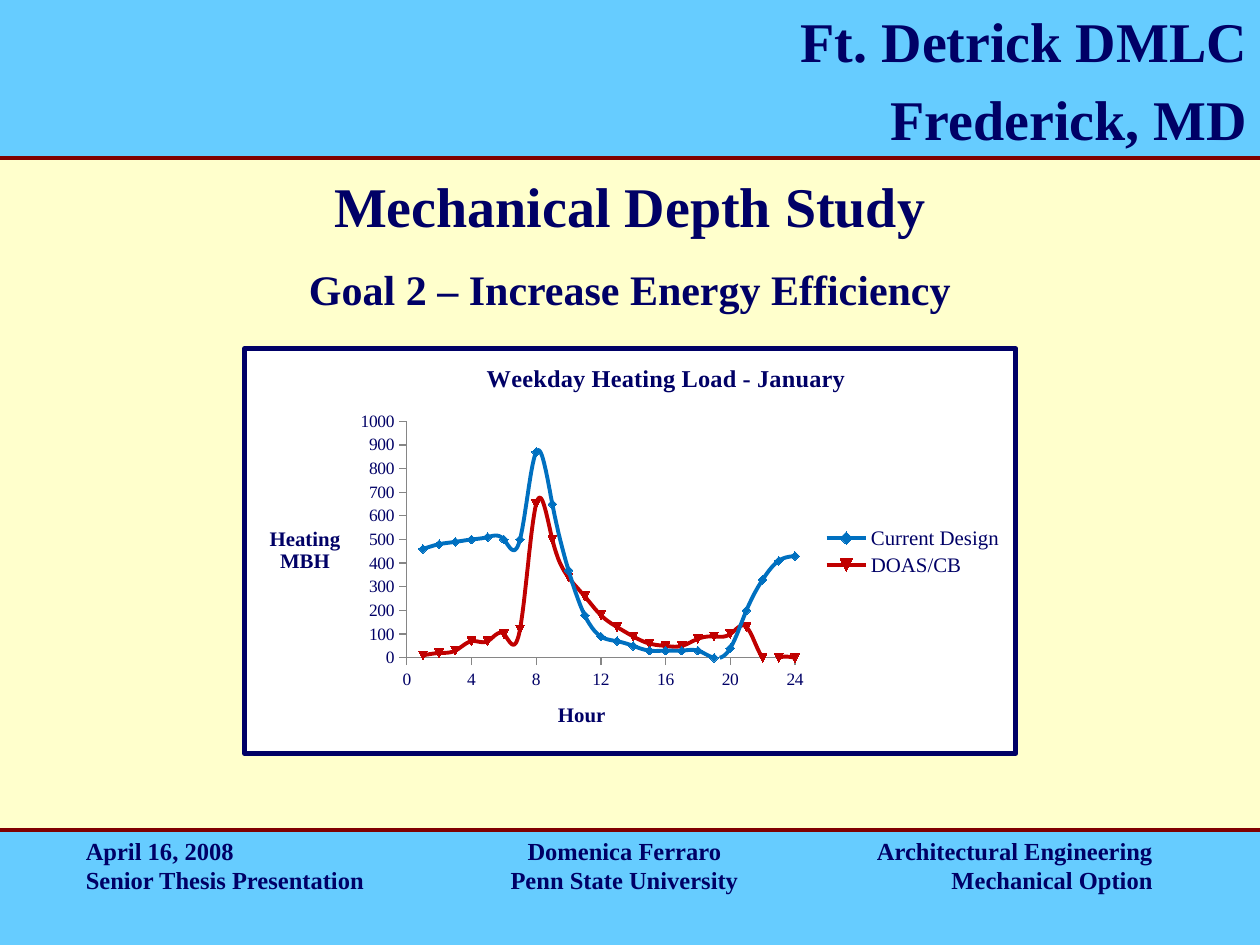
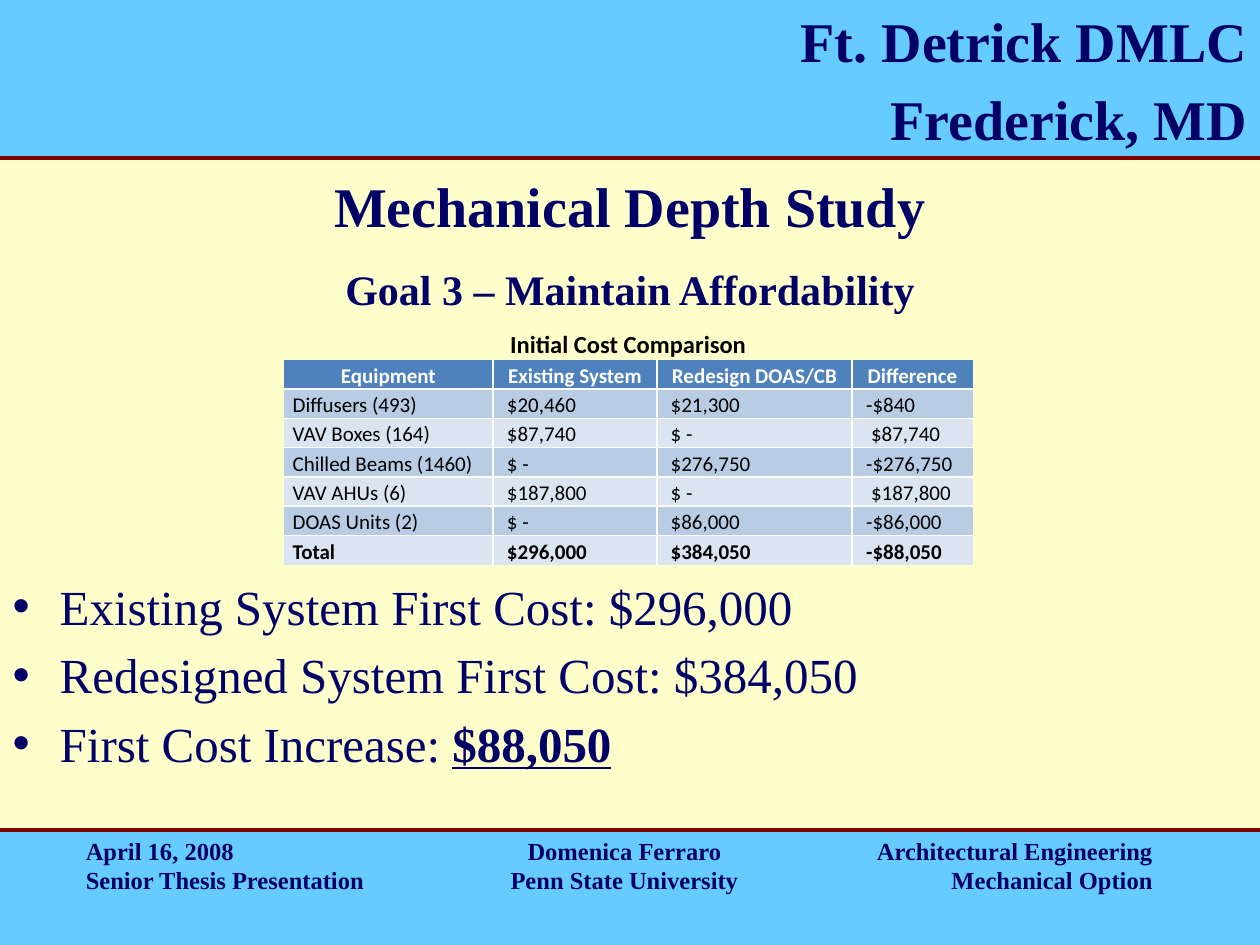
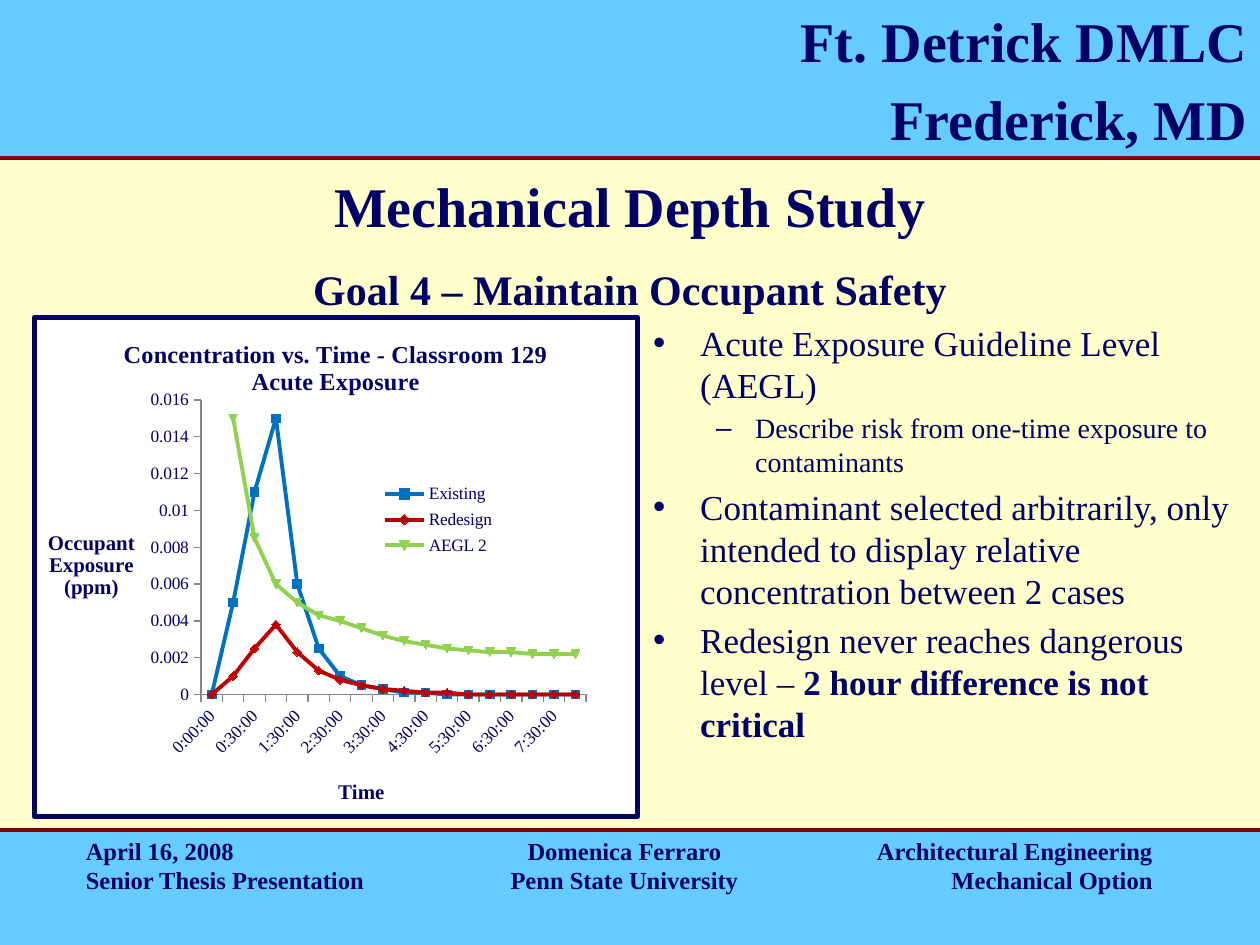
"""Build three thesis slides on heating load, first cost and occupant safety."""
from pptx import Presentation
from pptx.chart.data import CategoryChartData, XyChartData
from pptx.dml.color import RGBColor
from pptx.enum.chart import XL_CHART_TYPE, XL_LEGEND_POSITION, XL_MARKER_STYLE, XL_TICK_MARK
from pptx.enum.shapes import MSO_CONNECTOR, MSO_SHAPE
from pptx.enum.text import MSO_ANCHOR, MSO_AUTO_SIZE, PP_ALIGN
from pptx.oxml import parse_xml
from pptx.oxml.ns import nsdecls, qn
from pptx.util import Cm, Pt
from lxml.etree import SubElement

rgb = RGBColor.from_string
NAVY, SKY, CREAM, MAROON = "000066", "66CCFF", "FFFFCC", "800000"
WHITE, BLACK, GRAY = "FFFFFF", "000000", "868686"
BLUE, RED, GREEN = "0070C0", "C00000", "92D050"
HEADER_BLUE, DARK_BAND, LIGHT_BAND = "4F81BD", "B8CCE4", "DBE5F1"
SERIF = "Times New Roman"


def write(text_frame, text, size, bold=True, align=None, color=NAVY, font=SERIF):
    """Fill a text frame and format all its runs alike."""
    text_frame.text = text
    for paragraph in text_frame.paragraphs:
        paragraph.alignment = align
        for run in paragraph.runs:
            run.font.name, run.font.size, run.font.bold = font, Pt(size), bold
            run.font.color.rgb = rgb(color)


def place(element, chart_box, *box):
    """Lay out a chart part at left, top, width and height in centimetres."""
    for old in element.findall(qn("c:layout")):
        element.remove(old)
    is_plot = element.tag == qn("c:plotArea")
    layout = parse_xml(f"<c:layout {nsdecls('c')}><c:manualLayout/></c:layout>")
    manual = layout[0]
    if is_plot:
        SubElement(manual, qn("c:layoutTarget")).set("val", "inner")
    for side in "xy":
        SubElement(manual, qn(f"c:{side}Mode")).set("val", "edge")
    for side, length, total in zip("xywh", box, chart_box[2:] * 2):
        SubElement(manual, qn(f"c:{side}")).set("val", str(length / total))
    element.insert(0 if is_plot else 1, layout)


presentation = Presentation()
presentation.slide_width, presentation.slide_height = Cm(25.4), Cm(19.05)
background = presentation.slide_master.background.fill
background.solid()
background.fore_color.rgb = rgb(CREAM)

footers = [
    (1.48, PP_ALIGN.LEFT, "April 16, 2008\nSenior Thesis Presentation"),
    (9.31, PP_ALIGN.CENTER, "Domenica Ferraro\nPenn State University"),
    (16.93, PP_ALIGN.RIGHT, "Architectural Engineering\nMechanical Option"),
]
goals = [
    (5, "Goal 2 – Increase Energy Efficiency"),
    (1, "Goal 3 – Maintain Affordability"),
    (1, "Goal 4 – Maintain Occupant Safety"),
]
for layout_index, goal in goals:
    slide = presentation.slides.add_slide(presentation.slide_layouts[layout_index])
    for top, height in [(16.72, 2.33), (0, 3.19)]:
        band = slide.shapes.add_shape(MSO_SHAPE.RECTANGLE, 0, Cm(top), Cm(25.4), Cm(height))
        band.shadow.inherit = False
        band.fill.solid()
        band.fill.fore_color.rgb = rgb(SKY)
        band.line.fill.background()
    write(band.text_frame, "Ft. Detrick DMLC\nFrederick, MD", 32, align=PP_ALIGN.RIGHT)
    band.text_frame.paragraphs[1].space_before = Pt(6.4)

    for top in (3.18, 16.73):
        rule = slide.shapes.add_connector(MSO_CONNECTOR.STRAIGHT, Cm(25.4), Cm(top), 0, Cm(top))
        rule.line.color.rgb = rgb(MAROON)
        rule.line.width = Pt(2)
        SubElement(rule._element.spPr, qn("a:effectLst"))

    for left, align, text in footers:
        footer = slide.shapes.add_textbox(Cm(left), Cm(16.72), Cm(6.56), Cm(1.27))
        footer.text_frame.word_wrap = True
        write(footer.text_frame, text, 14, align=align)

    title = slide.shapes.title
    title.left, title.top, title.width, title.height = 0, Cm(3.39), Cm(25.4), Cm(1.48)
    subtitle = slide.shapes.add_textbox(0, Cm(5.08), Cm(25.4), Cm(1.48))
    for heading, text, size in [(title, "Mechanical Depth Study", 32), (subtitle, goal, 24)]:
        heading.text_frame.word_wrap = True
        heading.text_frame.auto_size = MSO_AUTO_SIZE.NONE
        heading.text_frame.vertical_anchor = MSO_ANCHOR.MIDDLE
        write(heading.text_frame, text, size, align=PP_ALIGN.CENTER)

heating_slide, cost_slide, safety_slide = presentation.slides

bullet_lists = [
    (cost_slide, (0, 11.49, 25.4, 4.6), [
        (0, 28, "Existing System First Cost: $296,000", ""),
        (0, 28, "Redesigned System First Cost: $384,050", ""),
        (0, 28, "First Cost Increase: ", "$88,050"),
    ]),
    (safety_slide, (12.91, 6.35, 12.49, 9.73), [
        (0, 20, "Acute Exposure Guideline Level (AEGL)", ""),
        (1, 16, "Describe risk from one-time exposure to contaminants", ""),
        (0, 20, "Contaminant selected arbitrarily, only intended to display relative "
                "concentration between 2 cases", ""),
        (0, 20, "Redesign never reaches dangerous level – ", "2 hour difference is not critical"),
    ]),
]
bullet_styles = [("•", 0.95, 0.95), ("–", 2.06, 0.79)]
for slide, box, bullets in bullet_lists:
    body = slide.placeholders[1]
    body.left, body.top, body.width, body.height = map(Cm, box)
    text_frame = body.text_frame
    text_frame.auto_size = MSO_AUTO_SIZE.NONE
    text_frame.text = "\n".join(text for level, size, text, emphasis in bullets)
    for index, (level, size, text, emphasis) in enumerate(bullets):
        paragraph = text_frame.paragraphs[index]
        paragraph.level = level
        symbol, margin, hanging = bullet_styles[level]
        properties = paragraph._p.get_or_add_pPr()
        properties.set("marL", str(Cm(margin)))
        properties.set("indent", str(-Cm(hanging)))
        SubElement(properties, qn("a:buChar")).set("char", symbol)
        paragraph.space_before = Pt(size * 0.2 if index else 0)
        if emphasis:
            run = paragraph.add_run()
            run.text = emphasis
            run.font.bold = True
            run.font.underline = True if slide is cost_slide else None
        for run in paragraph.runs:
            run.font.name, run.font.size = SERIF, Pt(size)
            run.font.color.rgb = rgb(NAVY)

cost_rows = [
    ("Initial Cost Comparison", "", "", ""),
    ("Equipment", "Existing System", "Redesign DOAS/CB", "Difference"),
    ("Diffusers (493)", "$20,460", "$21,300", "-$840"),
    ("VAV Boxes (164)", "$87,740", "$ -", "$87,740"),
    ("Chilled Beams (1460)", "$ -", "$276,750", "-$276,750"),
    ("VAV AHUs (6)", "$187,800", "$ -", "$187,800"),
    ("DOAS Units (2)", "$ -", "$86,000", "-$86,000"),
    ("Total", "$296,000", "$384,050", "-$88,050"),
]
last_row, last_column = len(cost_rows) - 1, 3
frame = cost_slide.shapes.add_table(8, 4, Cm(5.72), Cm(6.57), Cm(13.89), Cm(4.72))
table = frame.table
table.first_row = table.horz_banding = False
style_id = frame._element.find(".//" + qn("a:tableStyleId"))
style_id.text = "{2D5ABB26-0587-4C30-8999-92F81FD0307C}"
for column, width in zip(table.columns, (4.22, 3.3, 3.94, 2.43)):
    column.width = Cm(width)
for row in table.rows:
    row.height = Cm(0.59)
table.cell(0, 0).merge(table.cell(0, last_column))
for row, values in enumerate(cost_rows):
    for column, text in enumerate(values):
        cell = table.cell(row, column)
        cell.vertical_anchor = MSO_ANCHOR.BOTTOM
        cell.margin_top = cell.margin_bottom = 0
        cell.margin_left = cell.margin_right = Cm(0.18)
        write(cell.text_frame, text, 12 if row else 14, row in (0, 1, last_row),
              PP_ALIGN.LEFT if row > 1 else PP_ALIGN.CENTER,
              WHITE if row == 1 else BLACK, "Calibri")
        cell.text_frame.paragraphs[0].line_spacing = 1.15
        if row == 0:
            cell.fill.background()
            continue
        if row > 1 and column:
            positive = column == last_column and not text.startswith("-")
            cell.margin_left = Cm(0.38 if positive else 0.28)
        cell.fill.solid()
        cell.fill.fore_color.rgb = rgb(
            HEADER_BLUE if row == 1 else LIGHT_BAND if row % 2 else DARK_BAND)
        borders = [
            ("lnL", column > 0, 1),
            ("lnR", column < last_column, 1),
            ("lnT", row > 1, 1.5 if row == 2 else 1),
            ("lnB", row < last_row, 1.5 if row == 1 else 1),
        ]
        shown = [(tag, width) for tag, visible, width in borders if visible]
        for position, (tag, width) in enumerate(shown):
            cell._tc.get_or_add_tcPr().insert(position, parse_xml(
                f'<a:{tag} {nsdecls("a")} w="{Pt(width)}"><a:solidFill>'
                f'<a:srgbClr val="{WHITE}"/></a:solidFill></a:{tag}>'))

heating_loads = {
    "Current Design": [460, 480, 490, 500, 510, 500, 500, 870, 650, 370, 180, 90,
                       70, 50, 30, 30, 30, 30, 0, 40, 200, 330, 410, 430],
    "DOAS/CB": [10, 20, 30, 70, 70, 100, 120, 650, 500, 340, 260, 180,
                130, 90, 60, 50, 50, 80, 90, 100, 130, 0, 0, 0],
}
heating_data = XyChartData()
for name, loads in heating_loads.items():
    series = heating_data.add_series(name)
    for hour, load in enumerate(loads, 1):
        series.add_data_point(hour, load)

exposures = {
    "Existing": [0, 0.005, 0.011, 0.015, 0.006, 0.0025, 0.001, 0.0005, 0.0003,
                 0.0001, 0.0001, 0, 0, 0, 0, 0, 0, 0],
    "Redesign": [0, 0.001, 0.0025, 0.0038, 0.0023, 0.0013, 0.0008, 0.0005, 0.0003,
                 0.0002, 0.0001, 0.0001, 0, 0, 0, 0, 0, 0],
    "AEGL 2": [None, 0.015, 0.0085, 0.006, 0.005, 0.0043, 0.004, 0.0036, 0.0032,
               0.0029, 0.0027, 0.0025, 0.0024, 0.0023, 0.0023, 0.0022, 0.0022, 0.0022],
}
seconds_per_day = 24 * 60 * 60
exposure_data = CategoryChartData()
exposure_data.categories = [0, 10 / seconds_per_day] + [half / 48 for half in range(1, 17)]
exposure_data.categories.number_format = "h:mm:ss"
for name, levels in exposures.items():
    exposure_data.add_series(name, levels)

chart_plans = [
    dict(slide=heating_slide, kind=XL_CHART_TYPE.XY_SCATTER_SMOOTH, data=heating_data,
         box=(4.88, 6.98, 15.65, 8.26), smooth="1", maximum=1000, step=100, legend_size=12,
         first_index=1, title=("Weekday Heating Load - January", 4.82, 0.19),
         across=("Hour", 6.28, 7.13), upward=("Heating\nMBH", 0.43, 3.53),
         plot=(3.29, 1.48, 7.88, 4.83), legend=(11.6, 3.54, 3.92, 1.2)),
    dict(slide=safety_slide, kind=XL_CHART_TYPE.LINE_MARKERS, data=exposure_data,
         box=(0.64, 6.35, 12.27, 10.16), smooth="0", maximum=0.016, step=0.002, legend_size=10,
         first_index=0, title=("Concentration vs. Time - Classroom 129\nAcute Exposure", 1.74, 0.35),
         across=("Time", 6.1, 9.32), upward=("Occupant\nExposure\n(ppm)", 0.2, 4.25),
         plot=(3.39, 1.68, 7.83, 6), legend=(6.99, 3.27, 2.45, 1.69)),
]
for plan in chart_plans:
    box = plan["box"]
    chart = plan["slide"].shapes.add_chart(plan["kind"], *map(Cm, box), plan["data"]).chart
    chart.font.name, chart.font.size = SERIF, Pt(10)
    chart.font.color.rgb = rgb(NAVY)
    chart.element.find(qn("c:txPr")).addprevious(parse_xml(
        f'<c:spPr {nsdecls("c", "a")}><a:solidFill><a:srgbClr val="{WHITE}"/></a:solidFill>'
        f'<a:ln w="{Pt(3)}"><a:solidFill><a:srgbClr val="{NAVY}"/></a:solidFill></a:ln></c:spPr>'))

    across, upward = chart.category_axis, chart.value_axis
    upward.minimum_scale, upward.maximum_scale = 0, plan["maximum"]
    upward.major_unit = plan["step"]
    for axis in (across, upward):
        axis.has_major_gridlines = False
        axis.major_tick_mark = XL_TICK_MARK.OUTSIDE
        axis.format.line.color.rgb = rgb(GRAY)
        axis.tick_labels.font.size = Pt(10)
    titles = [(chart.chart_title, plan["title"], 14), (across.axis_title, plan["across"], 12),
              (upward.axis_title, plan["upward"], 12)]
    for chart_title, (text, left, top), size in titles:
        write(chart_title.text_frame, text, size, align=PP_ALIGN.CENTER)
        chart_title.element.find(".//" + qn("a:bodyPr")).set("rot", "0")
        place(chart_title.element, box, left, top)

    chart.has_legend = True
    chart.legend.position = XL_LEGEND_POSITION.RIGHT
    chart.legend.include_in_layout = False
    chart.legend.font.size = Pt(plan["legend_size"])
    place(chart.element.find(".//" + qn("c:legend")), box, *plan["legend"])
    place(chart.element.find(".//" + qn("c:plotArea")), box, *plan["plot"])

    plot = chart.plots[0]
    plot.vary_by_categories = False
    for series, color in zip(plot.series, (BLUE, RED, GREEN)):
        series.format.line.color.rgb = rgb(color)
        series.format.line.width = Pt(2.25)
        series.marker.style, series.marker.size = XL_MARKER_STYLE.AUTOMATIC, 5
        series.marker.format.fill.solid()
        series.marker.format.fill.fore_color.rgb = rgb(color)
        series.marker.format.line.color.rgb = rgb(color)
    for index, series in enumerate(chart.element.iter(qn("c:ser")), plan["first_index"]):
        series.find(qn("c:idx")).set("val", str(index))
        series.find(qn("c:smooth")).set("val", plan["smooth"])
    if plan["slide"] is heating_slide:
        across.minimum_scale, across.maximum_scale, across.major_unit = 0, 24, 4
    else:
        across.tick_labels.number_format = "h:mm:ss"
        across.tick_labels.number_format_is_linked = False
        category_axis = chart.element.find(".//" + qn("c:catAx"))
        category_axis.find(qn("c:txPr")).find(qn("a:bodyPr")).set("rot", "-2700000")
        skip = parse_xml(f'<c:tickLblSkip {nsdecls("c")} val="2"/>')
        category_axis.find(qn("c:noMultiLvlLbl")).addprevious(skip)

presentation.save("out.pptx")
